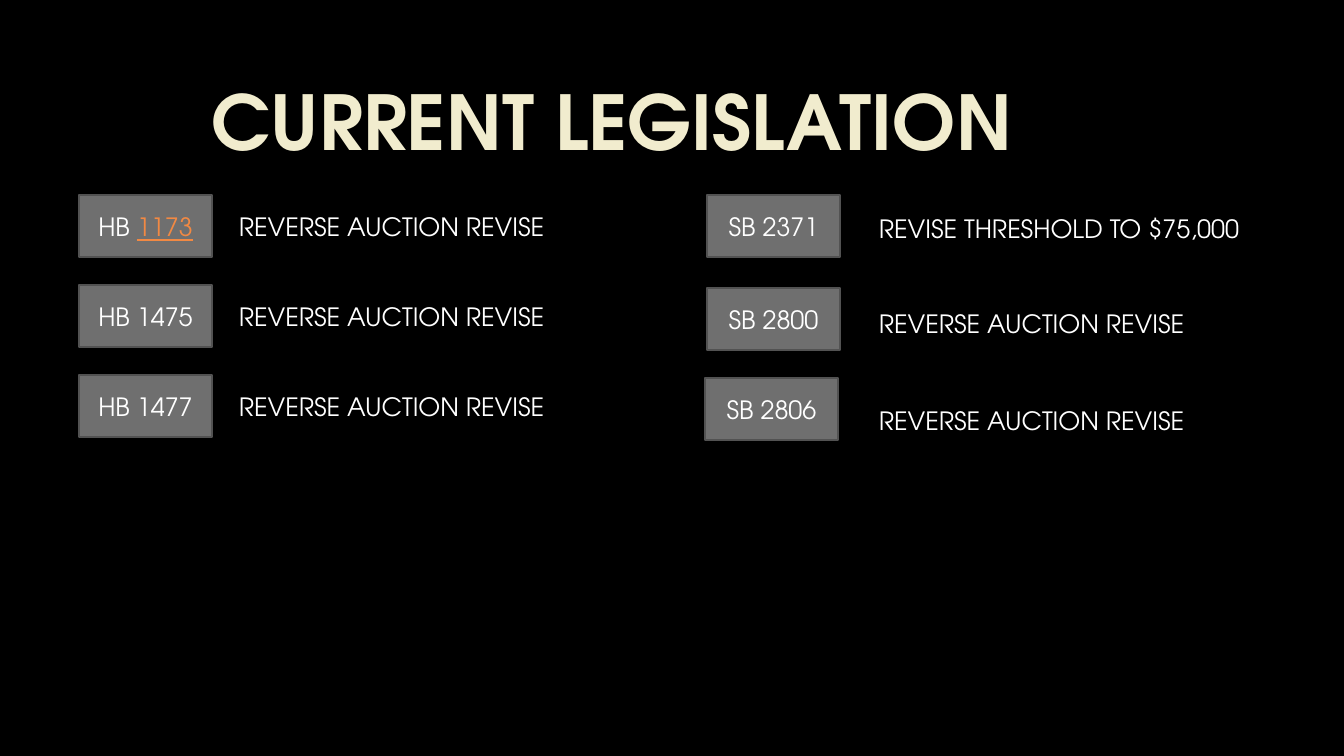
"""Build the Current Legislation slide with house and senate bills."""
from dataclasses import dataclass

from pptx import Presentation
from pptx.dml.color import RGBColor
from pptx.enum.shapes import MSO_SHAPE
from pptx.enum.text import MSO_ANCHOR, MSO_AUTO_SIZE, PP_ALIGN
from pptx.util import Emu, Pt

TITLE = "CURRENT LEGISLATION"
REVERSE = "REVERSE AUCTION REVISE"
THRESHOLD = "REVISE THRESHOLD TO $75,000"

HOUSE_BILLS = [
    (["HB ", "1173"], (79, 195), REVERSE, (229, 206)),
    (["HB 1475"], (79, 285), REVERSE, (229, 296)),
    (["HB 1477"], (79, 375), REVERSE, (229, 386)),
]
SENATE_BILLS = [
    (["SB 2371"], (707, 195), THRESHOLD, (869, 208)),
    (["SB 2800"], (707, 288), REVERSE, (869, 303)),
    (["SB 2806"], (705, 378), REVERSE, (869, 400)),
]
MARKED_NUMBER = "1173"

SLIDE_SIZE = (1344, 756)
TITLE_BOX = (197, 70, 830, 102)
BILL_SIZE = (133, 62)
SUMMARY_HEIGHT = 40
SUMMARY_WIDTHS = {REVERSE: 330, THRESHOLD: 385}
EMU_PER_PX = 914400 / 100.8


@dataclass(frozen=True)
class Theme:
    """Colours, font and sizes of the slide."""
    font: str = "TeX Gyre Adventor"
    background: RGBColor = RGBColor(0x00, 0x00, 0x00)
    title: RGBColor = RGBColor(0xF1, 0xEC, 0xCE)
    text: RGBColor = RGBColor(0xFF, 0xFF, 0xFF)
    marked: RGBColor = RGBColor(0xF2, 0x89, 0x43)
    bill_fill: RGBColor = RGBColor(0x6F, 0x6F, 0x6F)
    bill_line: RGBColor = RGBColor(0x52, 0x52, 0x52)
    title_size: int = 54
    body_size: int = 18
    line_width: float = 1.5


THEME = Theme()


def scaled(*lengths):
    """Turn px lengths into EMU."""
    return [Emu(round(length * EMU_PER_PX)) for length in lengths]


def add_run(paragraph, text, size, color):
    """Append one styled run and return it."""
    run = paragraph.add_run()
    run.text = text
    run.font.name = THEME.font
    run.font.size = Pt(size)
    run.font.color.rgb = color
    return run


def add_label(slide, box, text, size, color, alignment):
    """Add a one-line text box and return its run."""
    frame = slide.shapes.add_textbox(*scaled(*box)).text_frame
    frame.word_wrap = False
    frame.auto_size = MSO_AUTO_SIZE.SHAPE_TO_FIT_TEXT
    paragraph = frame.paragraphs[0]
    paragraph.alignment = alignment
    return add_run(paragraph, text, size, color)


def add_bill(slide, parts, position):
    """Add the grey rectangle with a bill number."""
    shape = slide.shapes.add_shape(MSO_SHAPE.RECTANGLE, *scaled(*position, *BILL_SIZE))
    shape.shadow.inherit = False
    shape.fill.solid()
    shape.fill.fore_color.rgb = THEME.bill_fill
    shape.line.color.rgb = THEME.bill_line
    shape.line.width = Pt(THEME.line_width)
    shape.text_frame.vertical_anchor = MSO_ANCHOR.MIDDLE
    paragraph = shape.text_frame.paragraphs[0]
    paragraph.alignment = PP_ALIGN.CENTER
    for part in parts:
        marked = part == MARKED_NUMBER
        run = add_run(paragraph, part, THEME.body_size, THEME.marked if marked else THEME.text)
        run.font.underline = marked


def main():
    """Build and save the presentation."""
    presentation = Presentation()
    presentation.slide_width, presentation.slide_height = scaled(*SLIDE_SIZE)
    slide = presentation.slides.add_slide(presentation.slide_layouts[6])
    slide.background.fill.solid()
    slide.background.fill.fore_color.rgb = THEME.background

    title = add_label(slide, TITLE_BOX, TITLE, THEME.title_size, THEME.title, PP_ALIGN.CENTER)
    title.font.bold = True
    for parts, bill_position, summary, summary_position in HOUSE_BILLS + SENATE_BILLS:
        add_bill(slide, parts, bill_position)
        summary_box = (*summary_position, SUMMARY_WIDTHS[summary], SUMMARY_HEIGHT)
        add_label(slide, summary_box, summary, THEME.body_size, THEME.text, PP_ALIGN.LEFT)
    presentation.save("out.pptx")


if __name__ == "__main__":
    main()
